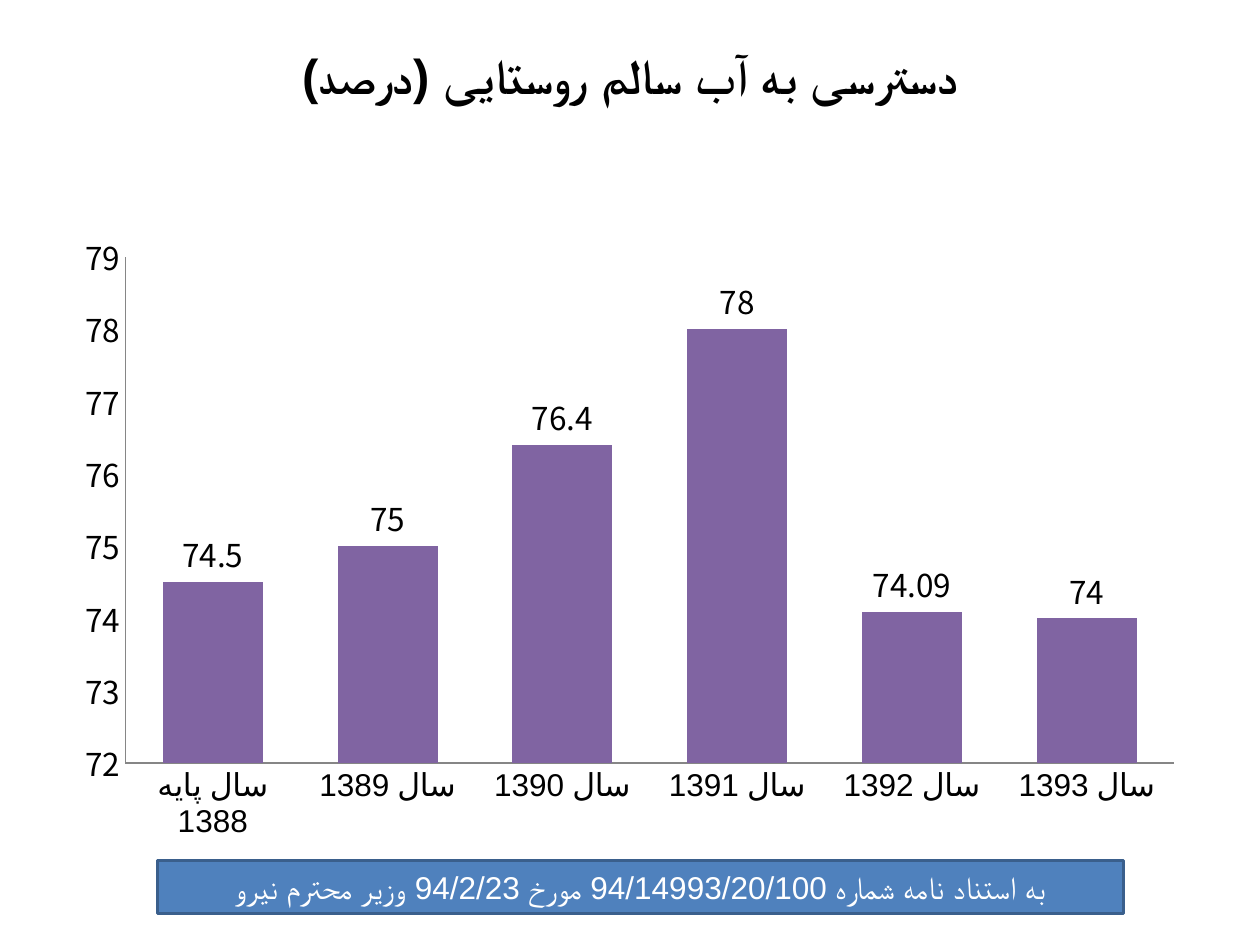
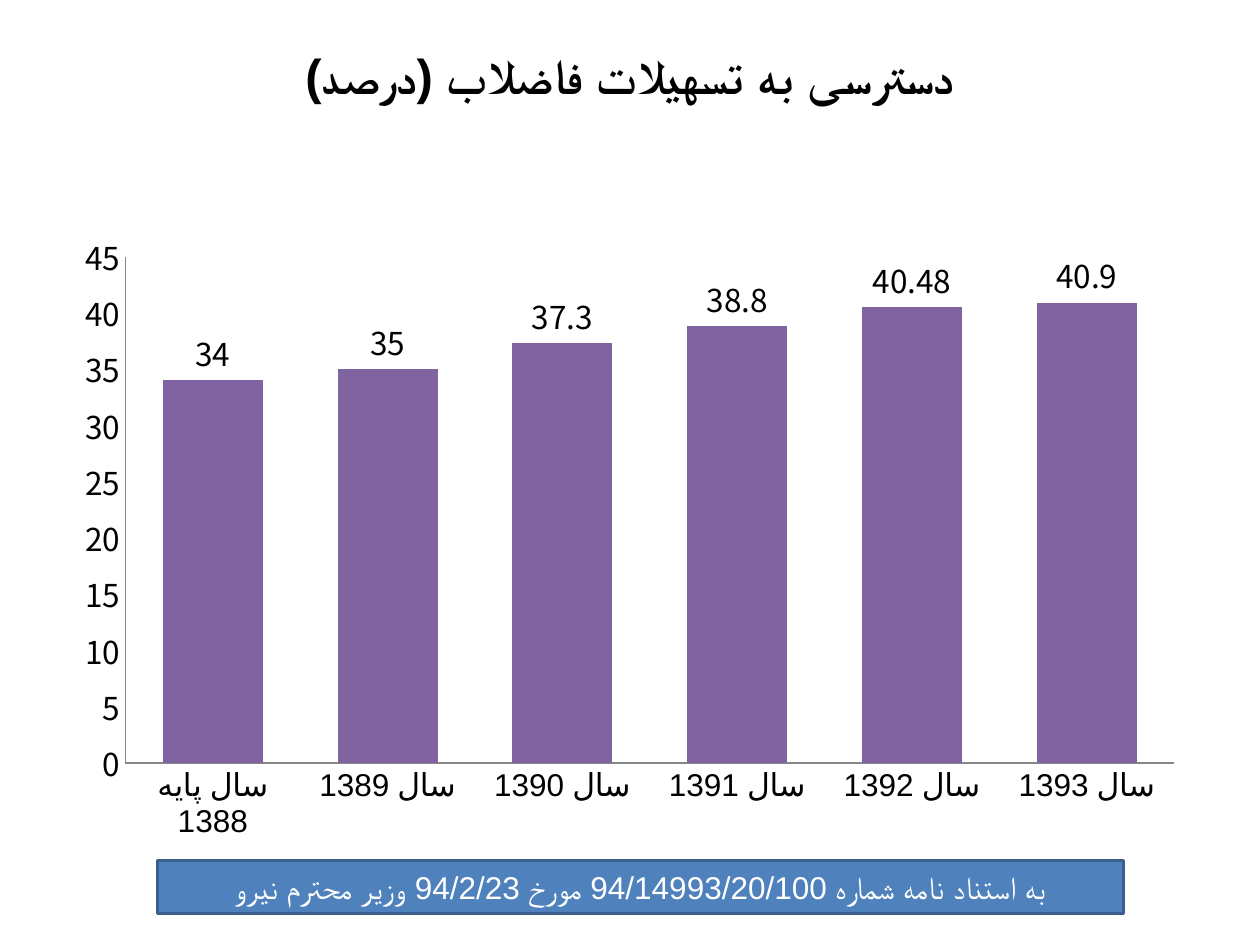
from dataclasses import dataclass

from lxml import etree
from pptx import Presentation
from pptx.chart.data import CategoryChartData
from pptx.dml.color import RGBColor
from pptx.enum.chart import XL_CHART_TYPE as ChartType
from pptx.enum.chart import XL_LABEL_POSITION as LabelPosition
from pptx.enum.chart import XL_TICK_MARK as TickMark
from pptx.enum.shapes import MSO_SHAPE as ShapeKind
from pptx.enum.text import MSO_ANCHOR as Anchor
from pptx.enum.text import PP_ALIGN as Align
from pptx.oxml.ns import qn
from pptx.util import Pt

COLORS = {
    "white": "FFFFFF",
    "text": "000000",
    "bar": "8064A2",
    "axis": "868686",
    "band": "4F81BD",
    "band_line": "3A5F8C",
}
TITLE_FONT = "Arial"
BODY_FONT = "Noto Sans CJK KR"
COMPLEX_FONT = "Arial"
YEARS = ["سال پایه 1388"] + [f"سال {year}" for year in range(1389, 1394)]
REFERENCE = "به استناد نامه شماره 94/14993/20/100 مورخ 94/2/23 وزیر محترم نیرو"


@dataclass(frozen=True)
class Box:
    left: float
    top: float
    width: float
    height: float

    def lengths(self) -> tuple:
        return Pt(self.left), Pt(self.top), Pt(self.width), Pt(self.height)


@dataclass(frozen=True)
class Indicator:
    title: str
    values: tuple
    axis_minimum: float
    axis_maximum: float
    axis_step: float


TITLE_BOX = Box(0, 1.5, 720, 82.8)
CHART_BOX = Box(36, 126, 648, 356.4)
REFERENCE_BOX = Box(90, 491.8, 552, 30.2)
PLOT_LAYOUT = {"x": 0.055, "y": 0.058, "w": 0.925, "h": 0.812}

INDICATORS = [
    Indicator("دسترسی به آب سالم روستایی (درصد)",
              (74.5, 75, 76.4, 78, 74.09, 74), 72, 79, 1),
    Indicator("دسترسی به تسهیلات فاضلاب (درصد)",
              (34, 35, 37.3, 38.8, 40.48, 40.9), 0, 45, 5),
]


def color(name: str) -> RGBColor:
    return RGBColor.from_string(COLORS[name])


def fill_solid(item, name: str) -> None:
    item.fill.solid()
    item.fill.fore_color.rgb = color(name)


def style_font(font, name: str, size: float, color_name: str, bold: bool = False) -> None:
    font.name = name
    font.size = Pt(size)
    font.bold = bold
    font.color.rgb = color(color_name)


def add_complex_font(element) -> None:
    for latin in list(element.iter(qn("a:latin"))):
        complex_font = etree.Element(qn("a:cs"))
        complex_font.set("typeface", COMPLEX_FONT)
        latin.addnext(complex_font)


def write_persian(shape, text: str, font: str, size: float, color_name: str,
                  bold: bool = False) -> None:
    frame = shape.text_frame
    frame.text = text
    frame.word_wrap = True
    frame.vertical_anchor = Anchor.MIDDLE
    paragraph = frame.paragraphs[0]
    paragraph.alignment = Align.CENTER
    paragraph._p.get_or_add_pPr().set("rtl", "1")
    style_font(paragraph.runs[0].font, font, size, color_name, bold)
    add_complex_font(shape.element)


def place_title(slide, text: str) -> None:
    title = slide.shapes.title
    title.left, title.top, title.width, title.height = TITLE_BOX.lengths()
    fill_solid(title, "white")
    write_persian(title, text, TITLE_FONT, 28, "text", bold=True)


def fix_plot_area(chart) -> None:
    plot_area = next(chart.element.iter(qn("c:plotArea")))
    for layout in plot_area.findall(qn("c:layout")):
        plot_area.remove(layout)
    layout = etree.Element(qn("c:layout"))
    manual = etree.SubElement(layout, qn("c:manualLayout"))
    settings = {"layoutTarget": "inner", "xMode": "edge", "yMode": "edge", **PLOT_LAYOUT}
    for tag, value in settings.items():
        etree.SubElement(manual, qn(f"c:{tag}")).set("val", str(value))
    plot_area.insert(0, layout)


def add_indicator_chart(slide, indicator: Indicator) -> None:
    data = CategoryChartData()
    data.categories = YEARS
    data.add_series("Series 1", indicator.values)
    chart = slide.shapes.add_chart(
        ChartType.COLUMN_CLUSTERED, *CHART_BOX.lengths(), data).chart
    chart.has_title = False
    chart.has_legend = False
    style_font(chart.font, BODY_FONT, 18, "text")

    plot = chart.plots[0]
    plot.gap_width = 75
    plot.vary_by_categories = False
    fill_solid(plot.series[0].format, "bar")
    plot.has_data_labels = True
    plot.data_labels.show_value = True
    plot.data_labels.position = LabelPosition.OUTSIDE_END

    for axis in (chart.category_axis, chart.value_axis):
        axis.has_major_gridlines = False
        axis.major_tick_mark = TickMark.NONE
        axis.minor_tick_mark = TickMark.NONE
        axis.format.line.color.rgb = color("axis")
        axis.format.line.width = Pt(0.75)
    chart.value_axis.minimum_scale = indicator.axis_minimum
    chart.value_axis.maximum_scale = indicator.axis_maximum
    chart.value_axis.major_unit = indicator.axis_step
    fix_plot_area(chart)
    add_complex_font(chart.element)


def add_reference_band(slide) -> None:
    band = slide.shapes.add_shape(ShapeKind.RECTANGLE, *REFERENCE_BOX.lengths())
    band.shadow.inherit = False
    fill_solid(band, "band")
    band.line.color.rgb = color("band_line")
    band.line.width = Pt(2)
    write_persian(band, REFERENCE, BODY_FONT, 18, "white")


def main() -> None:
    presentation = Presentation()
    presentation.slide_width = Pt(720)
    presentation.slide_height = Pt(540)
    title_only = presentation.slide_layouts.get_by_name("Title Only")
    for indicator in INDICATORS:
        slide = presentation.slides.add_slide(title_only)
        place_title(slide, indicator.title)
        add_indicator_chart(slide, indicator)
        add_reference_band(slide)
    presentation.save("out.pptx")


if __name__ == "__main__":
    main()
